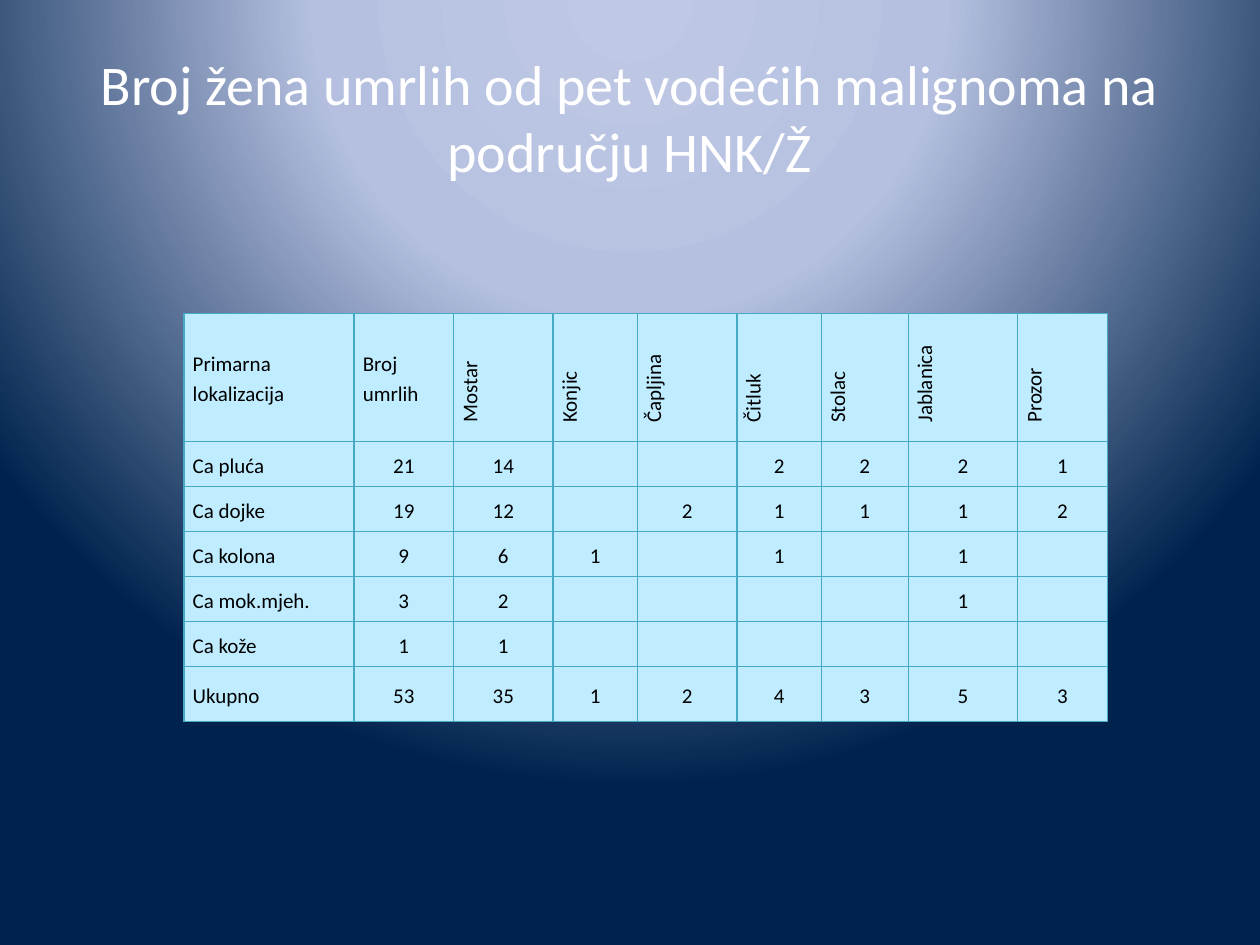
from pptx import Presentation
from pptx.dml.color import RGBColor
from pptx.enum.text import MSO_ANCHOR as Anchor, PP_ALIGN as Align
from pptx.oxml import parse_xml
from pptx.oxml.ns import nsdecls
from pptx.util import Inches, Pt

COLORS = {"glow": "BFC9E5", "haze": "B5C0E0", "navy": "00234D", "title": "FFFFFF",
          "text": "000000", "cell": "BFEDFF", "border": "46AAC5"}
COL_WIDTHS = [1.35, 0.79, 0.79, 0.67, 0.79, 0.67, 0.69, 0.87, 0.71]
ROW_HEIGHTS = [1.02] + [0.36] * 5 + [0.44]
ROWS = [
    ["Primarna\nlokalizacija", "Broj umrlih", "Mostar", "Konjic", "Čapljina",
     "Čitluk", "Stolac", "Jablanica", "Prozor"],
    ["Ca pluća", "21", "14", "", "", "2", "2", "2", "1"],
    ["Ca dojke", "19", "12", "", "2", "1", "1", "1", "2"],
    ["Ca kolona", "9", "6", "1", "", "1", "", "1", ""],
    ["Ca mok.mjeh.", "3", "2", "", "", "", "", "1", ""],
    ["Ca kože", "1", "1", "", "", "", "", "", ""],
    ["Ukupno", "53", "35", "1", "2", "4", "3", "5", "3"],
]


def write_text(tf, text, size=12, color="text", align=Align.LEFT, spacing=None, indent=0):
    """Fill a text frame with one formatted paragraph per line of text."""
    for i, line in enumerate(text.split("\n")):
        p = tf.paragraphs[0] if i == 0 else tf.add_paragraph()
        p.alignment = align
        if spacing:
            p.line_spacing = spacing
        if indent:
            p._p.get_or_add_pPr().set("marL", str(Inches(indent)))
        r = p.add_run()
        r.text = line
        r.font.name = "Calibri"
        r.font.size = Pt(size)
        r.font.color.rgb = RGBColor.from_string(COLORS[color])


def add_background(s):
    """Give the slide a circular gradient centred above its top edge."""
    stops = "".join(
        f'<a:gs pos="{pos * 1000}"><a:srgbClr val="{COLORS[name]}"/></a:gs>'
        for pos, name in ((0, "glow"), (40, "haze"), (100, "navy")))
    s.element.cSld.insert(0, parse_xml(
        f'<p:bg {nsdecls("p", "a")}><p:bgPr><a:gradFill rotWithShape="1">'
        f'<a:gsLst>{stops}</a:gsLst><a:path path="circle">'
        '<a:fillToRect l="50000" t="-80000" r="50000" b="180000"/></a:path>'
        '</a:gradFill><a:effectLst/></p:bgPr></p:bg>'))


def add_title(s, left, top, width, height):
    """Place the centred slide title in the given box."""
    tf = s.shapes.add_textbox(Inches(left), Inches(top), Inches(width), Inches(height)).text_frame
    tf.word_wrap = True
    tf.vertical_anchor = Anchor.MIDDLE
    write_text(tf, "Broj žena umrlih od pet vodećih malignoma na području HNK/Ž",
               size=32, color="title", align=Align.CENTER)


def style_cell(cell):
    """Set the margins, borders and fill of a table cell."""
    cell.margin_left = cell.margin_right = Inches(0.07)
    cell.margin_top = cell.margin_bottom = 0
    cell.vertical_anchor = Anchor.MIDDLE
    for side in "LRTB":
        cell._tc.get_or_add_tcPr().append(parse_xml(
            f'<a:ln{side} {nsdecls("a")} w="{Pt(0.75)}"><a:solidFill>'
            f'<a:srgbClr val="{COLORS["border"]}"/></a:solidFill></a:ln{side}>'))
    cell.fill.solid()
    cell.fill.fore_color.rgb = RGBColor.from_string(COLORS["cell"])


def add_deaths_table(s, left, top, width, height):
    """Place the table of deaths by cancer site and municipality."""
    table = s.shapes.add_table(len(ROWS), len(COL_WIDTHS), Inches(left), Inches(top),
                               Inches(width), Inches(height)).table
    table.first_row = table.horz_banding = False
    for column, share in zip(table.columns, COL_WIDTHS):
        column.width = Inches(width * share / sum(COL_WIDTHS))
    for row, share in zip(table.rows, ROW_HEIGHTS):
        row.height = Inches(height * share / sum(ROW_HEIGHTS))
    for i, values in enumerate(ROWS):
        for j, value in enumerate(values):
            cell = table.cell(i, j)
            style_cell(cell)
            vertical = i == 0 and j > 1
            if vertical:
                cell._tc.get_or_add_tcPr().set("vert", "vert270")
            if value:
                write_text(cell.text_frame, value, spacing=1.15,
                           align=Align.CENTER if i and j else Align.LEFT,
                           indent=0.08 if vertical else 0)


def main():
    """Build and save the slide."""
    prs = Presentation()
    prs.slide_width, prs.slide_height = Inches(10), Inches(7.5)
    s = prs.slides.add_slide(prs.slide_layouts[6])
    add_background(s)
    add_title(s, 0.5, 0.3, 9, 1.25)
    add_deaths_table(s, 1.46, 2.49, 7.33, 3.24)
    prs.save("out.pptx")


if __name__ == "__main__":
    main()
